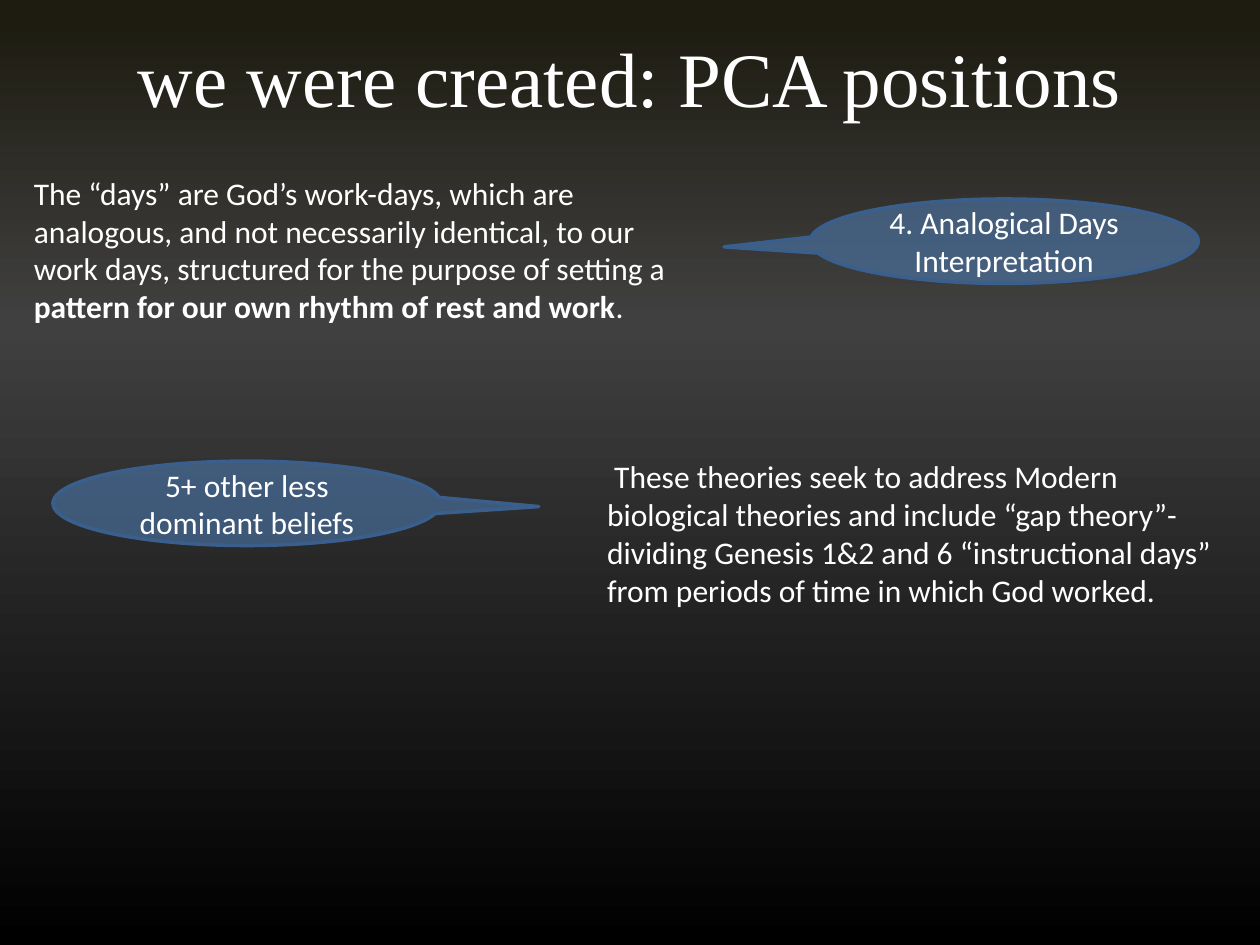
from copy import deepcopy

from lxml.etree import SubElement
from pptx import Presentation
from pptx.dml.color import RGBColor
from pptx.enum.shapes import MSO_SHAPE
from pptx.enum.text import MSO_ANCHOR, PP_ALIGN
from pptx.oxml.ns import qn
from pptx.util import Pt

COLORS = {
    "top": "1E1C11",
    "middle": "404040",
    "bottom": "000000",
    "text": "FFFFFF",
    "callout": "4F81BD",
    "outline": "3A5F8C",
}
CALLOUT_SIZE = (221.76, 48.24)


def rgb(name):
    """Return the named colour."""
    return RGBColor.from_string(COLORS[name])


def set_font(p, size, name="Calibri"):
    """Give a paragraph its font, size and the text colour."""
    p.font.name, p.font.size = name, Pt(size)
    p.font.color.rgb = rgb("text")


def set_background(s):
    """Fill the slide with a vertical gradient of three stops."""
    fill = s.background.fill
    fill.gradient()
    fill.gradient_angle = 270
    stops = s._element.find(f".//{qn('a:gsLst')}")
    stops.append(deepcopy(stops[-1]))
    positions = {"top": 0.02, "middle": 0.34, "bottom": 1}
    for stop, (name, position) in zip(fill.gradient_stops, positions.items()):
        stop.position = position
        stop.color.rgb = rgb(name)


def place_title(s, box, text):
    """Move and format the title placeholder."""
    sp = s.shapes.title
    sp.left, sp.top, sp.width, sp.height = map(Pt, box)
    tf = sp.text_frame
    tf.text = text
    tf.vertical_anchor = MSO_ANCHOR.MIDDLE
    p = tf.paragraphs[0]
    p.alignment = PP_ALIGN.CENTER
    set_font(p, 44, "Times New Roman")


def add_callout(s, box, text, tip):
    """Add a translucent oval callout whose tail ends at the tip."""
    sp = s.shapes.add_shape(MSO_SHAPE.OVAL_CALLOUT, *map(Pt, box))
    sp.shadow.inherit = False
    sp.adjustments[0], sp.adjustments[1] = tip
    sp.fill.solid()
    sp.fill.fore_color.rgb = rgb("callout")
    color = sp.fill._xPr.find(f"{qn('a:solidFill')}/{qn('a:srgbClr')}")
    SubElement(color, qn("a:alpha"), val="53000")
    sp.line.color.rgb = rgb("outline")
    sp.line.width = Pt(2)
    tf = sp.text_frame
    tf.text = text
    tf.word_wrap = True
    tf.vertical_anchor = MSO_ANCHOR.MIDDLE
    p = tf.paragraphs[0]
    p.alignment = PP_ALIGN.CENTER
    set_font(p, 18)


def add_description(s, box, runs):
    """Add a wrapped paragraph made of (text, bold) runs."""
    tf = s.shapes.add_textbox(*map(Pt, box)).text_frame
    tf.word_wrap = True
    p = tf.paragraphs[0]
    set_font(p, 18)
    for text, bold in runs:
        r = p.add_run()
        r.text, r.font.bold = text, bold


def main():
    """Build the slide and save it."""
    prs = Presentation()
    prs.slide_width, prs.slide_height = Pt(720), Pt(540)
    s = prs.slides.add_slide(prs.slide_layouts[5])
    set_background(s)
    place_title(s, (36, 12.24, 648, 63.36), "we were created: PCA positions")
    add_callout(s, (30.24, 263.52, *CALLOUT_SIZE),
                "5+ other less dominant beliefs", (0.752, 0.039))
    add_description(s, (339.84, 257.76, 360, 116.64), [
        (" These theories seek to address Modern biological theories and "
         "include “gap theory”-dividing Genesis 1&2 and 6 “instructional "
         "days” from periods of time in which God worked.", False)])
    add_callout(s, (462.96, 113.76, *CALLOUT_SIZE),
                "4. Analogical Days Interpretation", (-0.722, 0.067))
    add_description(s, (12.24, 95.76, 396.72, 94.32), [
        ("The “days” are God’s work-days, which are analogous, and not "
         "necessarily identical, to our work days, structured for the "
         "purpose of setting a ", False),
        ("pattern for our own rhythm of rest and work", True),
        (".", False)])
    prs.save("out.pptx")


if __name__ == "__main__":
    main()
